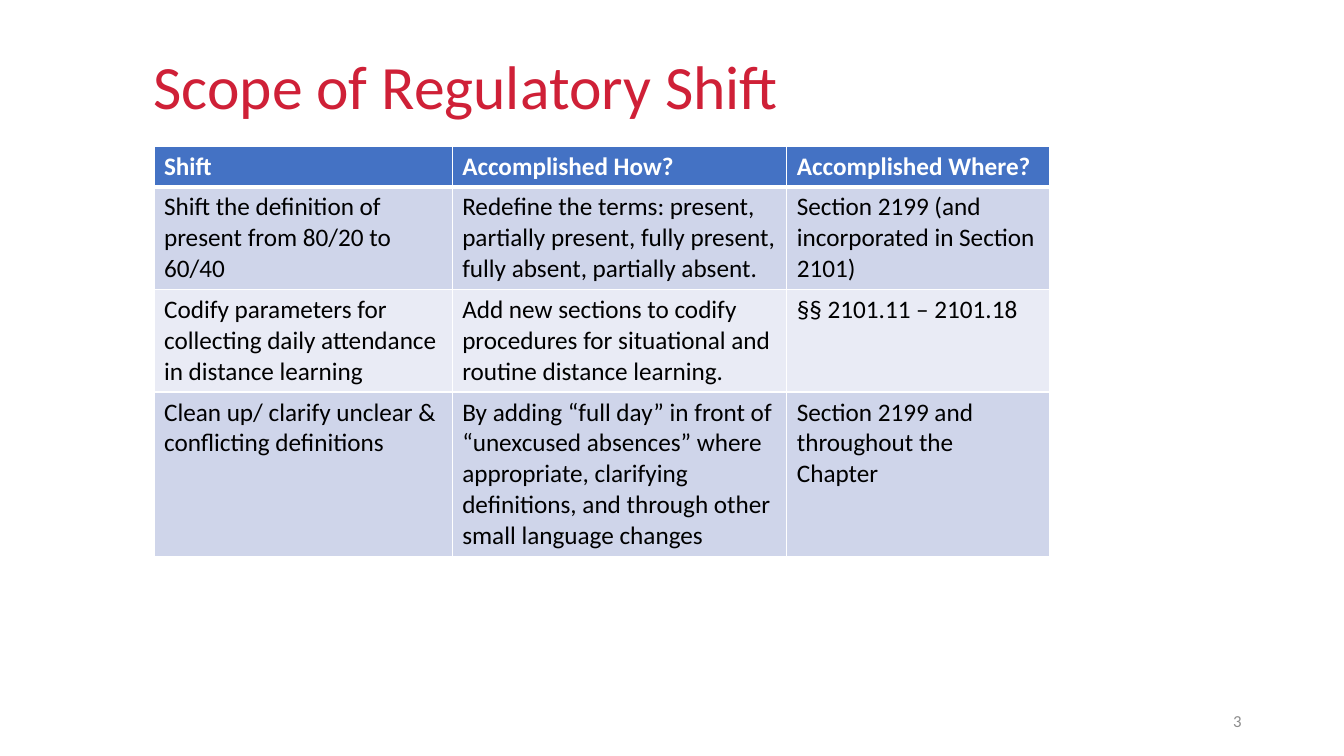
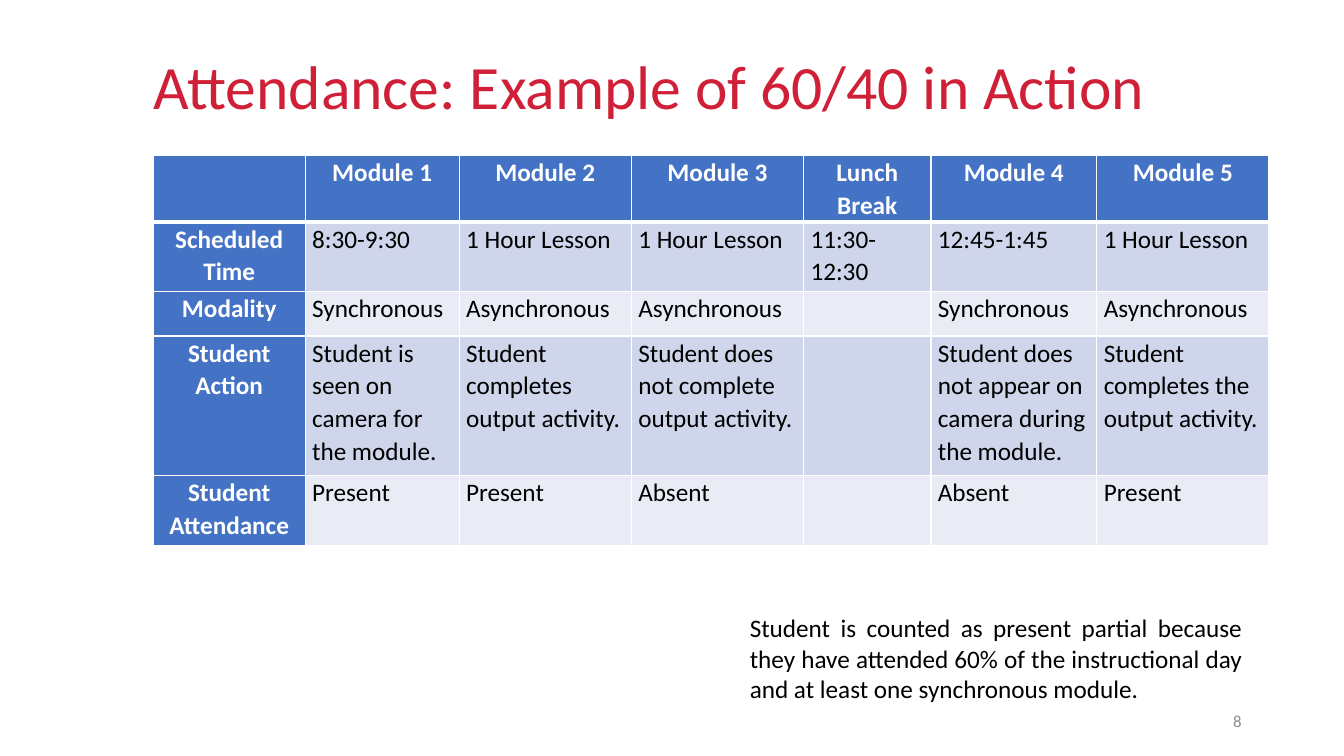
from lxml import etree
from pptx import Presentation
from pptx import util as u
from pptx.dml.color import RGBColor
from pptx.enum import text as t
from pptx.oxml import ns


class Theme:
    face = "Calibri"
    red = RGBColor.from_string("CF2037")
    blue = RGBColor.from_string("4472C4")
    bands = [RGBColor.from_string(c) for c in ("CFD5EA", "E9EBF5")]
    white = RGBColor.from_string("FFFFFF")
    black = RGBColor.from_string("000000")
    gray = RGBColor.from_string("8C8C8C")
    head, body, foot = 44, 18, 12


def write(frame, words, size, color, bold=False, **form):
    para = frame.paragraphs[0]
    for key, val in form.items():
        setattr(para, key, val)
    run = para.add_run()
    run.text = words
    look = {"name": Theme.face, "size": u.Pt(size), "bold": bold}
    for key, val in look.items():
        setattr(run.font, key, val)
    run.font.color.rgb = color


def rule(cell, side, width):
    line = etree.Element(ns.qn("a:ln" + side), w=str(u.Pt(width)))
    fill = etree.SubElement(line, ns.qn("a:solidFill"))
    etree.SubElement(fill, ns.qn("a:srgbClr"), val=str(Theme.white))
    cell._tc.get_or_add_tcPr().append(line)


left, mid, right, just = (
    t.PP_ALIGN.LEFT, t.PP_ALIGN.CENTER, t.PP_ALIGN.RIGHT, t.PP_ALIGN.JUSTIFY)
top, center = t.MSO_ANCHOR.TOP, t.MSO_ANCHOR.MIDDLE

pages = [
    {
        "title": "Scope of Regulatory Shift",
        "number": "3",
        "at": (110, 104.5),
        "cols": [213, 239, 188],
        "rows": [29, 73.5, 73, 117.5],
        "side": False,
        "pad": (7.2, 3.6),
        "space": 1.0,
        "cells": [
            ["Shift", "Accomplished How?", "Accomplished Where?"],
            ["Shift the definition of present from 80/20 to 60/40",
             "Redefine the terms: present, partially present, fully present, "
             "fully absent, partially absent.",
             "Section 2199 (and incorporated in Section 2101)"],
            ["Codify parameters for collecting daily attendance in distance learning",
             "Add new sections to codify procedures for situational and "
             "routine distance learning.",
             "§§ 2101.11 – 2101.18"],
            ["Clean up/ clarify unclear & conflicting definitions",
             "By adding “full day” in front of “unexcused absences” where "
             "appropriate, clarifying definitions, and through other small "
             "language changes",
             "Section 2199 and throughout the Chapter"],
        ],
        "note": "",
    },
    {
        "title": "Attendance: Example of 60/40 in Action",
        "number": "8",
        "at": (109.5, 111),
        "cols": [108.5, 110, 123, 123, 91, 118.5, 123],
        "rows": [47.5, 50, 31.5, 99.5, 50],
        "side": True,
        "pad": (5, 0),
        "space": 1.07,
        "cells": [
            ["", "Module 1", "Module 2", "Module 3", "Lunch Break",
             "Module 4", "Module 5"],
            ["Scheduled Time", "8:30-9:30", "1 Hour Lesson", "1 Hour Lesson",
             "11:30-12:30", "12:45-1:45", "1 Hour Lesson"],
            ["Modality", "Synchronous", "Asynchronous", "Asynchronous", "",
             "Synchronous", "Asynchronous"],
            ["Student Action", "Student is seen on camera for the module.",
             "Student completes output activity.",
             "Student does not complete output activity.", "",
             "Student does not appear on camera during the module.",
             "Student completes the output activity."],
            ["Student Attendance", "Present", "Present", "Absent", "",
             "Absent", "Present"],
        ],
        "note": "Student is counted as present partial because they have "
                "attended 60% of the instructional day and at least one "
                "synchronous module.",
    },
]

deck = Presentation()
deck.slide_width, deck.slide_height = u.Pt(960), u.Pt(540)

for page in pages:
    slide = deck.slides.add_slide(deck.slide_layouts[6])
    boxes = [
        (page["number"], (678, 500.5, 216, 28.5), center, Theme.foot, Theme.gray,
         {"alignment": right}),
        (page["title"], (102.5, 27, 756, 74.5), center, Theme.head, Theme.red,
         {"alignment": left, "line_spacing": 0.9}),
        (page["note"], (528.5, 434, 366, 73), top, Theme.body, Theme.black,
         {"alignment": just}),
    ]
    for words, spot, anchor, size, color, form in boxes:
        if words:
            frame = slide.shapes.add_textbox(*map(u.Pt, spot)).text_frame
            for key, val in {"word_wrap": True, "vertical_anchor": anchor}.items():
                setattr(frame, key, val)
            write(frame, words, size, color, **form)

    cols, rows = page["cols"], page["rows"]
    spot = (*page["at"], sum(cols), sum(rows))
    grid = slide.shapes.add_table(len(rows), len(cols), *map(u.Pt, spot)).table
    grid.first_col = page["side"]
    for col, width in zip(grid.columns, cols):
        col.width = u.Pt(width)
    for row, height in zip(grid.rows, rows):
        row.height = u.Pt(height)

    wide, high = map(u.Pt, page["pad"])
    pads = {"margin_left": wide, "margin_right": wide,
            "margin_top": high, "margin_bottom": high}
    for r, line in enumerate(page["cells"]):
        for c, words in enumerate(line):
            cell = grid.cell(r, c)
            for key, val in pads.items():
                setattr(cell, key, val)
            edges = {"L": 1, "R": 1, "T": 3 if r == 1 else 1, "B": 3 if r == 0 else 1}
            for side, width in edges.items():
                rule(cell, side, width)
            key = r == 0 or (page["side"] and c == 0)
            cell.fill.solid()
            cell.fill.fore_color.rgb = Theme.blue if key else Theme.bands[(r - 1) % 2]
            if words:
                write(cell.text_frame, words, Theme.body,
                      Theme.white if key else Theme.black, key,
                      alignment=mid if key and page["side"] else left,
                      line_spacing=page["space"])

deck.save("out.pptx")
